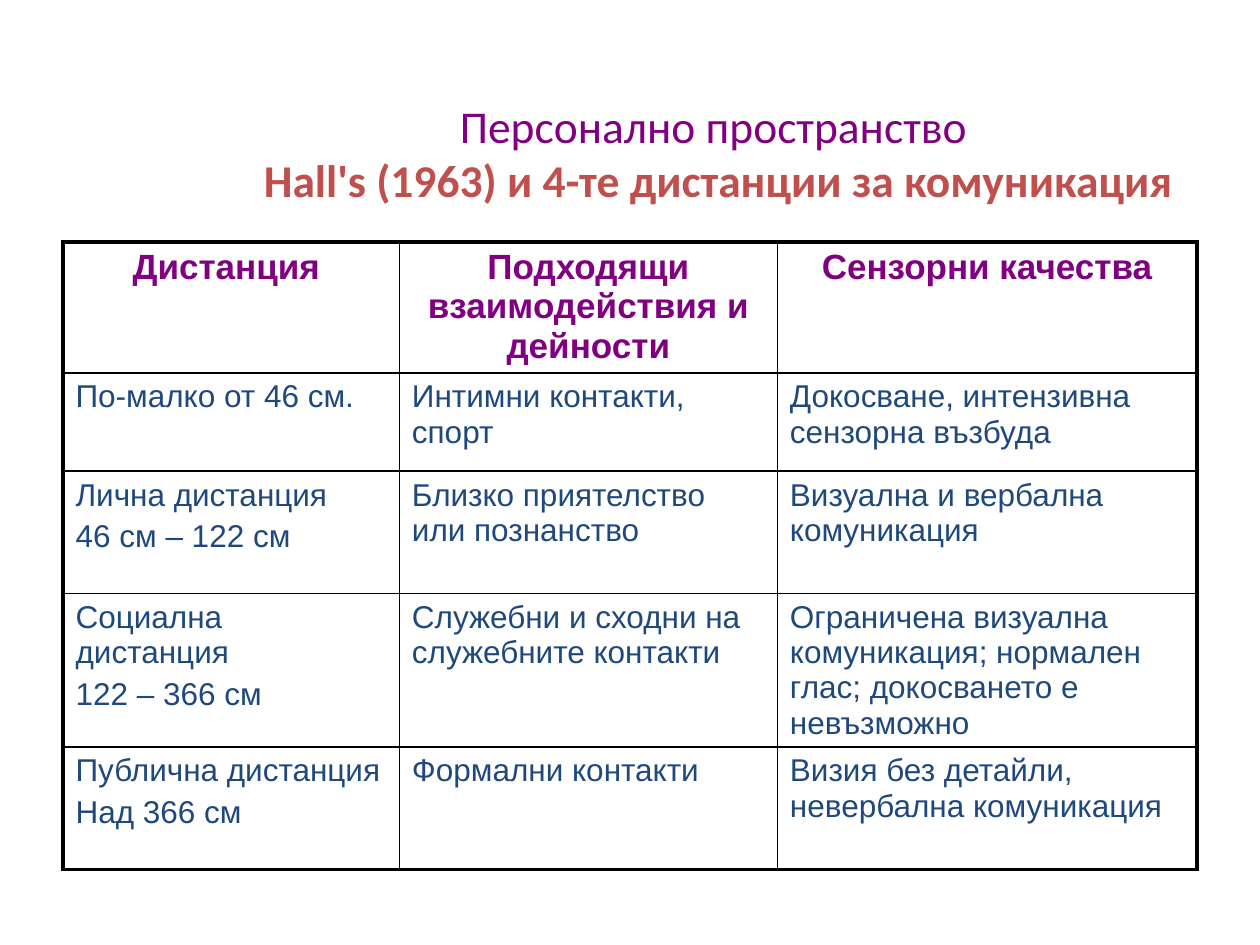
from lxml import etree
from pptx import Presentation
from pptx.dml.color import RGBColor
from pptx.enum.text import MSO_ANCHOR, PP_ALIGN
from pptx.oxml.ns import qn
from pptx.util import Inches, Pt

CENTER, LEFT = PP_ALIGN.CENTER, PP_ALIGN.LEFT
MIDDLE = MSO_ANCHOR.MIDDLE
PURPLE, RED, BLUE, BLACK = "800080", "C0504D", "1F497D", "000000"
THICK, THIN = 2.25, 1

TITLE_LINES = [
    ("Персонално пространство", {"size": Pt(26), "name": "Calibri", "bold": False}, PURPLE),
    (" Hall's (1963) и 4-те дистанции за комуникация",
     {"size": Pt(26), "name": "Calibri", "bold": True}, RED),
]
HEADER = {"size": Pt(20), "name": "Arial", "bold": True}
BODY = {"size": Pt(18), "name": "Arial", "bold": False}

COLUMNS = [2.67, 3, 3.33]
ROWS = [1.04, 0.78, 0.97, 1.06, 0.97]
# Each cell is a list of paragraphs split at "\n"; "\v" is a line break
CELLS = [
    ["Дистанция ", "Подходящи взаимодействия и дейности", "Сензорни качества"],
    ["По-малко от 46 см.", "Интимни контакти, спорт",
     "Докосване, интензивна сензорна възбуда"],
    ["Лична дистанция\n46 см – 122 см", "Близко приятелство или познанство",
     "Визуална и вербална комуникация"],
    ["Социална\vдистанция\n122 – 366 см", "Служебни и сходни на служебните контакти",
     "Ограничена визуална комуникация; нормален глас; докосването е невъзможно"],
    ["Публична дистанция\nНад 366 см", "Формални контакти",
     "Визия без детайли, невербална комуникация"],
]


def rgb(color):
    return RGBColor.from_string(color)


def format_run(r, values, color):
    for key, value in values.items():
        setattr(r.font, key, value)
    r.font.color.rgb = rgb(color)


def add_title(s):
    title = s.shapes.title
    title.left, title.top, title.width, title.height = map(Inches, (1.83, 0.5, 7.67, 1.42))
    tf = title.text_frame
    tf.vertical_anchor = MIDDLE
    p = tf.paragraphs[0]
    p.alignment = CENTER
    for i, (text, values, color) in enumerate(TITLE_LINES):
        if i:
            p.add_line_break()
        r = p.add_run()
        r.text = text
        format_run(r, values, color)


def set_borders(cell, widths):
    """Draw black cell borders; widths maps L, R, T, B to points."""
    tcPr = cell._tc.get_or_add_tcPr()
    for i, (side, width) in enumerate(widths.items()):
        ln = etree.Element(qn(f"a:ln{side}"), w=str(Pt(width)))
        fill = etree.SubElement(ln, qn("a:solidFill"))
        etree.SubElement(fill, qn("a:srgbClr"), val=BLACK)
        tcPr.insert(i, ln)


def fill_cell(cell, text, values, color, align):
    cell.fill.background()
    tf = cell.text_frame
    tf.text = text
    for p in tf.paragraphs:
        p.alignment = align
        p.space_before = Pt(values["size"].pt * 0.2)
        for r in p.runs:
            format_run(r, values, color)


def add_distance_table(s):
    last_row, last_col = len(ROWS) - 1, len(COLUMNS) - 1
    frame = s.shapes.add_table(len(ROWS), len(COLUMNS), Inches(0.5), Inches(1.92),
                               Inches(sum(COLUMNS)), Inches(sum(ROWS)))
    table = frame.table
    table.horz_banding = False
    for column, width in zip(table.columns, COLUMNS):
        column.width = Inches(width)
    for row, height in zip(table.rows, ROWS):
        row.height = Inches(height)

    for i, texts in enumerate(CELLS):
        style = (BODY, BLUE, LEFT) if i else (HEADER, PURPLE, CENTER)
        for j, text in enumerate(texts):
            cell = table.cell(i, j)
            fill_cell(cell, text, *style)
            # Thick lines only on the outer edge
            outer = {"L": j == 0, "R": j == last_col, "T": i == 0, "B": i == last_row}
            set_borders(cell, {side: THICK if edge else THIN for side, edge in outer.items()})


def main():
    prs = Presentation()
    prs.slide_width, prs.slide_height = Inches(10), Inches(7.5)
    s = prs.slides.add_slide(prs.slide_layouts[5])
    add_title(s)
    add_distance_table(s)
    prs.save("out.pptx")


if __name__ == "__main__":
    main()
